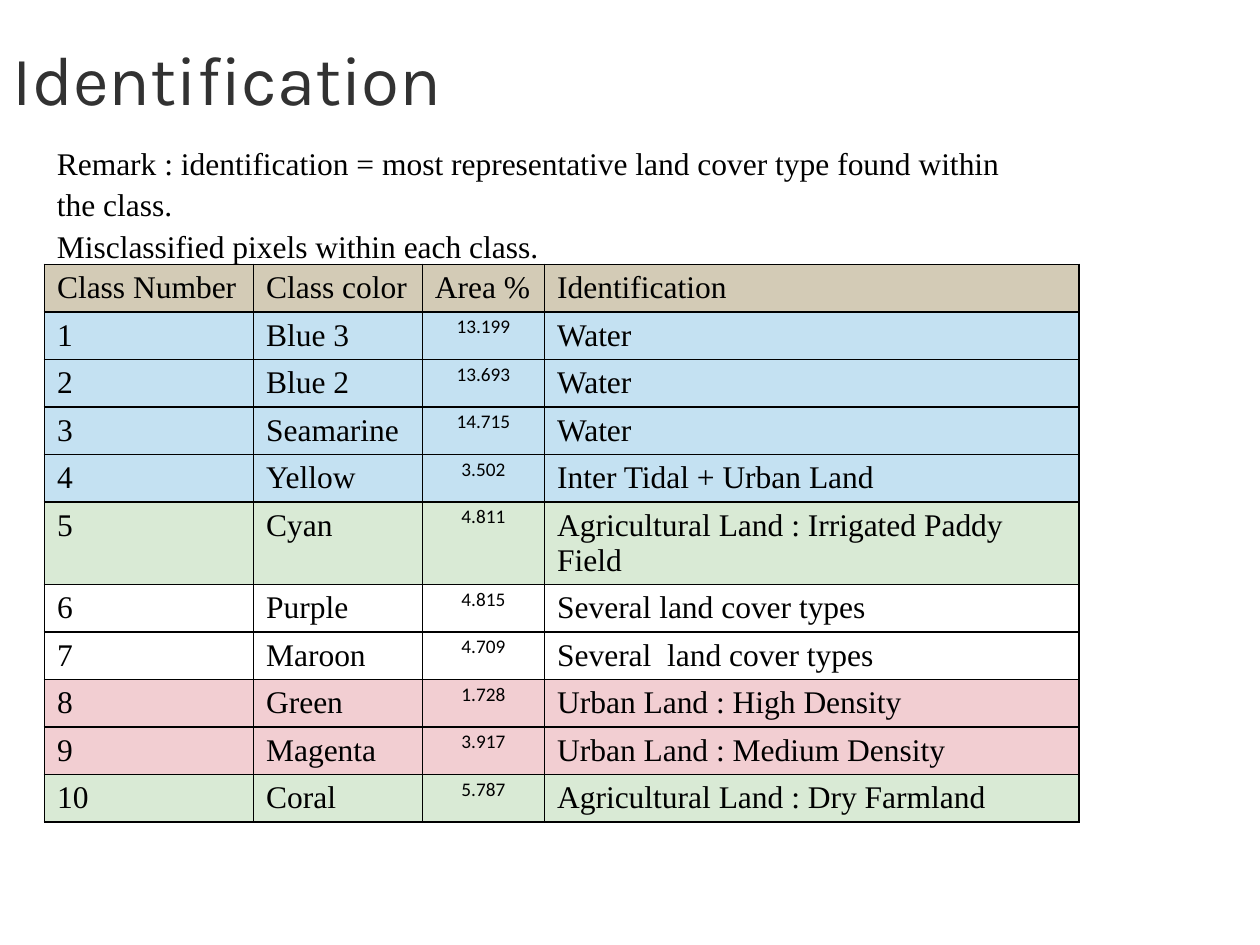
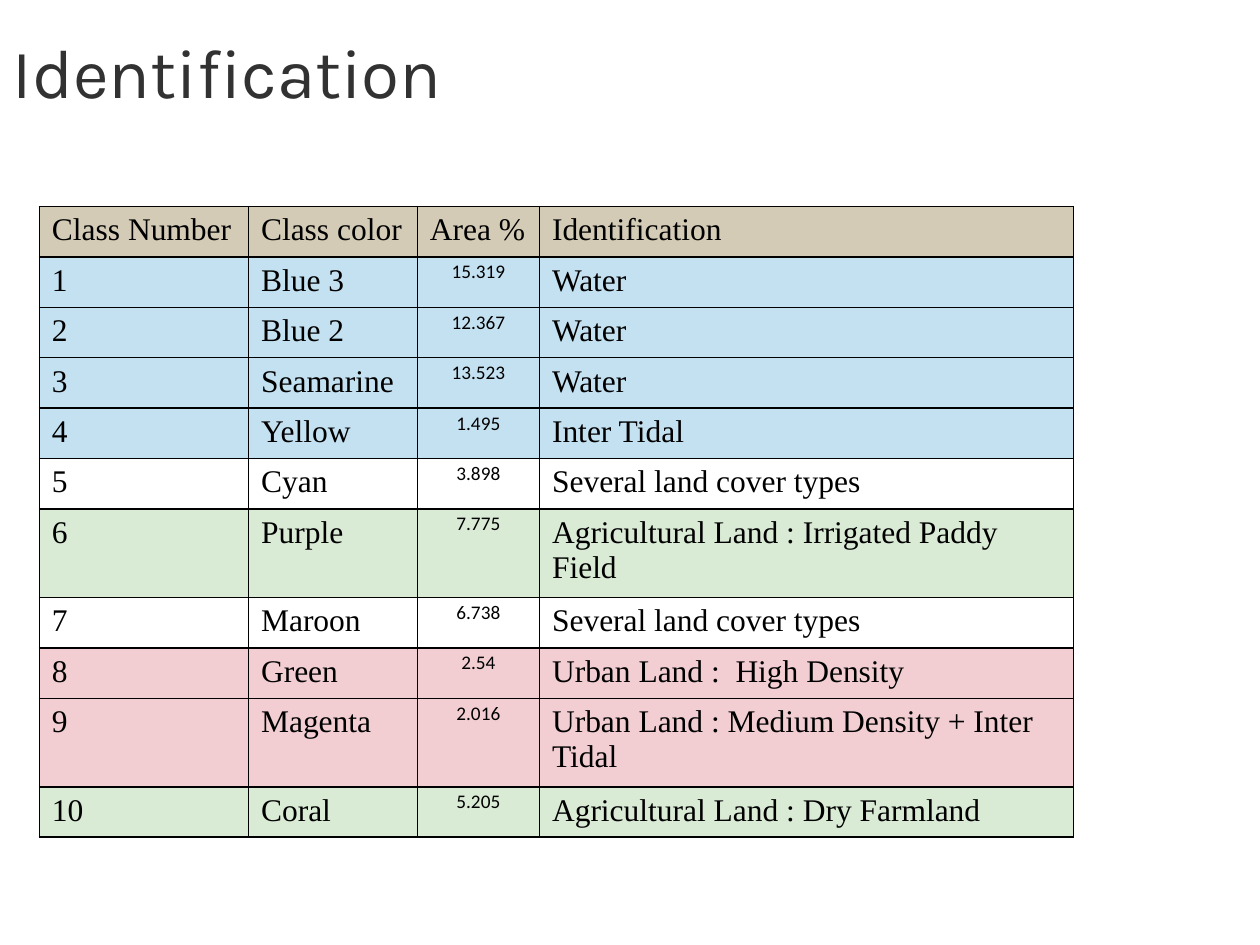
from typing import NamedTuple

from lxml.etree import SubElement
from pptx import Presentation
from pptx.dml.color import RGBColor
from pptx.enum.text import MSO_ANCHOR, MSO_AUTO_SIZE, PP_ALIGN
from pptx.oxml.ns import qn
from pptx.util import Pt

# Shared colours and fonts
BLACK = RGBColor(0x00, 0x00, 0x00)
TITLE_GREY = RGBColor(0x32, 0x32, 0x32)
HEADER_SAND = RGBColor(0xD3, 0xCB, 0xB6)
WATER_BLUE = RGBColor(0xC4, 0xE1, 0xF2)
FARM_GREEN = RGBColor(0xD9, 0xEA, 0xD5)
URBAN_PINK = RGBColor(0xF2, 0xCE, 0xD2)
MIXED_WHITE = RGBColor(0xFF, 0xFF, 0xFF)
TITLE_FONT, BODY_FONT, AREA_FONT = "Karla", "Times New Roman", "Calibri"

# The first word of an identification decides the row colour
LAND_COVER_FILLS = {
    "Water": WATER_BLUE,
    "Inter": WATER_BLUE,
    "Agricultural": FARM_GREEN,
    "Several": MIXED_WHITE,
    "Urban": URBAN_PINK,
}
HEADINGS = ("Class Number", "Class color", "Area %", "Identification")
COLUMN_WIDTHS = (119.5, 96.5, 69.8, 305.3)
AREA_COLUMN = 2
LONGEST_SINGLE_LINE = 35  # characters that fit in the identification column


class LandClass(NamedTuple):
    color_name: str
    area: str
    identification: str


class ClassTable(NamedTuple):
    left: float
    top: float
    row_height: float
    tall_row_height: float
    classes: tuple[LandClass, ...]
    title_spacing: float = 1.0
    remarks: tuple[str, ...] = ()


CLASS_TABLES = (
    ClassTable(25.4, 151, 27.1, 47, (
        LandClass("Blue 3", "13.199", "Water"),
        LandClass("Blue 2", "13.693", "Water"),
        LandClass("Seamarine", "14.715", "Water"),
        LandClass("Yellow", "3.502", "Inter Tidal + Urban Land"),
        LandClass("Cyan", "4.811", "Agricultural Land : Irrigated Paddy Field"),
        LandClass("Purple", "4.815", "Several land cover types"),
        LandClass("Maroon", "4.709", "Several  land cover types"),
        LandClass("Green", "1.728", "Urban Land : High Density"),
        LandClass("Magenta", "3.917", "Urban Land : Medium Density"),
        LandClass("Coral", "5.787", "Agricultural Land : Dry Farmland"),
    ), remarks=(
        "Remark : identification = most representative land cover type found "
        "within the class.",
        "Misclassified pixels within each class.",
    )),
    ClassTable(22.5, 118, 28.8, 50.6, (
        LandClass("Blue 3", "15.319", "Water"),
        LandClass("Blue 2", "12.367", "Water"),
        LandClass("Seamarine", "13.523", "Water"),
        LandClass("Yellow", "1.495", "Inter Tidal"),
        LandClass("Cyan", "3.898", "Several land cover types"),
        LandClass("Purple", "7.775", "Agricultural Land : Irrigated Paddy Field"),
        LandClass("Maroon", "6.738", "Several land cover types"),
        LandClass("Green", "2.54", "Urban Land :  High Density"),
        LandClass("Magenta", "2.016", "Urban Land : Medium Density + Inter Tidal"),
        LandClass("Coral", "5.205", "Agricultural Land : Dry Farmland"),
    ), title_spacing=0.8),
)


def write(frame, *lines: str, font: str = BODY_FONT, size: float = 18,
          color: RGBColor = BLACK, align=PP_ALIGN.LEFT,
          spacing: float = 1.0) -> None:
    """Put each line in its own paragraph of the text frame."""
    for index, line in enumerate(lines):
        paragraph = frame.add_paragraph() if index else frame.paragraphs[0]
        paragraph.alignment = align
        paragraph.line_spacing = spacing
        run = paragraph.add_run()
        run.text = line
        run.font.name, run.font.size = font, Pt(size)
        run.font.color.rgb = color


def add_title(slide, spacing: float) -> None:
    title = slide.shapes.title
    title.left, title.top, title.width, title.height = Pt(0), Pt(21.6), Pt(648), Pt(46)
    frame = title.text_frame
    frame.auto_size = MSO_AUTO_SIZE.NONE
    frame.vertical_anchor = MSO_ANCHOR.MIDDLE
    write(frame, "Identification", font=TITLE_FONT, size=39.6,
          color=TITLE_GREY, spacing=spacing)


def add_remarks(slide, remarks: tuple[str, ...]) -> None:
    box = slide.shapes.add_textbox(Pt(25.4), Pt(77), Pt(572.4), Pt(51))
    box.text_frame.word_wrap = True
    write(box.text_frame, *remarks, spacing=1.09)


def style_cell(cell, fill: RGBColor) -> None:
    """Draw the black grid lines, then the fill, as the schema orders them."""
    properties = cell._tc.get_or_add_tcPr()
    for side in ("a:lnL", "a:lnR", "a:lnT", "a:lnB"):
        border = SubElement(properties, qn(side), w=str(Pt(1)))
        solid = SubElement(border, qn("a:solidFill"))
        SubElement(solid, qn("a:srgbClr"), val=str(BLACK))
    cell.fill.solid()
    cell.fill.fore_color.rgb = fill


def add_class_table(slide, spec_table: ClassTable) -> None:
    rows = [HEADINGS] + [(str(number), *land_class) for number, land_class
                         in enumerate(spec_table.classes, start=1)]
    table = slide.shapes.add_table(
        len(rows), len(HEADINGS), Pt(spec_table.left), Pt(spec_table.top),
        Pt(sum(COLUMN_WIDTHS)), Pt(spec_table.row_height * len(rows))).table
    table.first_row = table.horz_banding = False
    for column, width in zip(table.columns, COLUMN_WIDTHS):
        column.width = Pt(width)

    for row_index, values in enumerate(rows):
        identification = values[-1]
        is_tall = len(identification) > LONGEST_SINGLE_LINE
        table.rows[row_index].height = Pt(
            spec_table.tall_row_height if is_tall else spec_table.row_height)
        fill = (LAND_COVER_FILLS[identification.split()[0]]
                if row_index else HEADER_SAND)
        for column_index, value in enumerate(values):
            cell = table.cell(row_index, column_index)
            style_cell(cell, fill)
            if row_index and column_index == AREA_COLUMN:
                cell.margin_left = cell.margin_right = Pt(5)
                cell.margin_top = cell.margin_bottom = Pt(0)
                write(cell.text_frame, value, font=AREA_FONT, size=11,
                      align=PP_ALIGN.CENTER, spacing=1.15)
            else:
                write(cell.text_frame, value)


def main() -> None:
    presentation = Presentation()
    presentation.slide_width, presentation.slide_height = Pt(720), Pt(540)
    title_only = presentation.slide_layouts[5]
    for class_table in CLASS_TABLES:
        slide = presentation.slides.add_slide(title_only)
        add_title(slide, class_table.title_spacing)
        add_class_table(slide, class_table)
        if class_table.remarks:
            add_remarks(slide, class_table.remarks)
    presentation.save("out.pptx")


if __name__ == "__main__":
    main()
